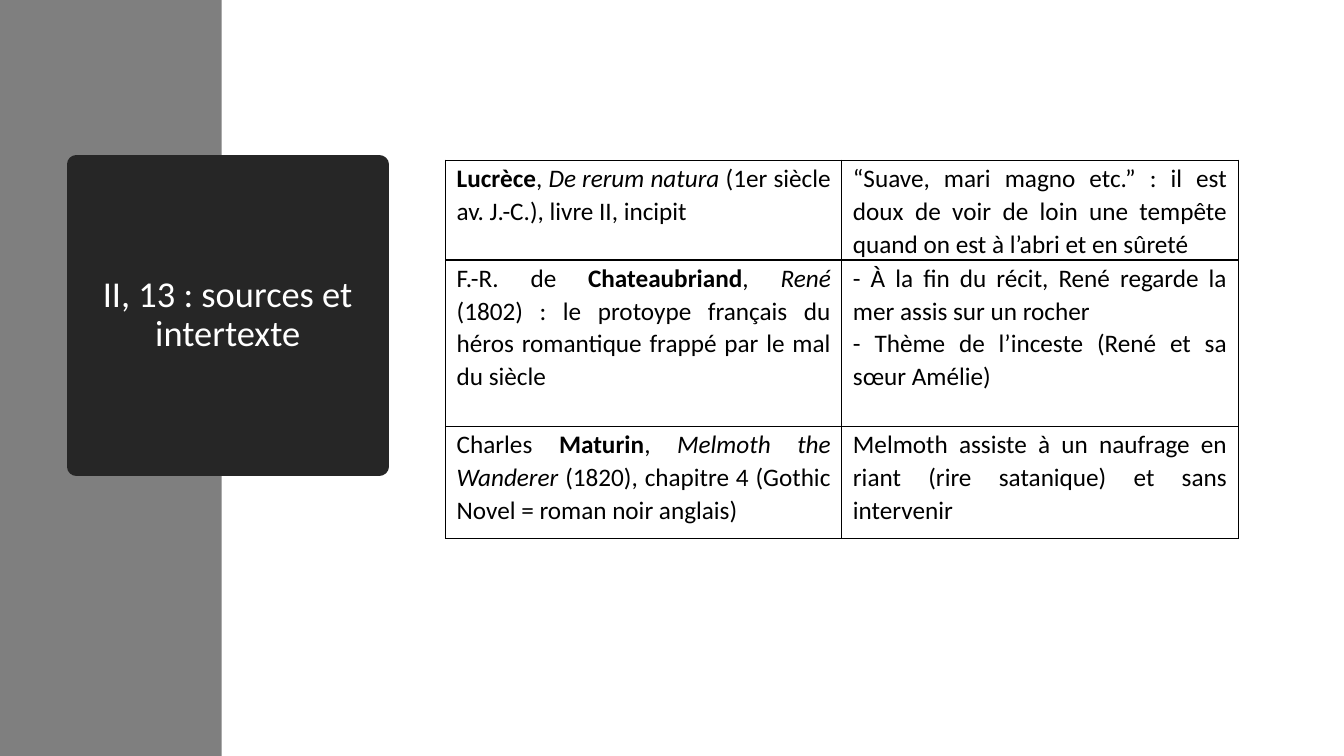
from typing import NamedTuple

from lxml import etree
from pptx import Presentation
from pptx.dml.color import RGBColor
from pptx.enum.shapes import MSO_SHAPE
from pptx.enum.text import MSO_ANCHOR, MSO_AUTO_SIZE, PP_ALIGN
from pptx.oxml import parse_xml
from pptx.oxml.ns import nsdecls
from pptx.util import Inches, Pt

RECTANGLE = MSO_SHAPE.RECTANGLE
MIDDLE, TOP = MSO_ANCHOR.MIDDLE, MSO_ANCHOR.TOP
CENTER, JUSTIFY = PP_ALIGN.CENTER, PP_ALIGN.JUSTIFY
NO_AUTOFIT = MSO_AUTO_SIZE.NONE

FONT = "Calibri"
GREY, DARK, BLACK, WHITE = "7F7F7F", "262626", "000000", "FFFFFF"
TITLE_LINE_WIDTH = 13.75
BORDER_WIDTH = 1
COLUMN_WIDTH = 3.93


class TextRun(NamedTuple):
    text: str
    bold: bool = False
    italic: bool = False


class SourceRow(NamedTuple):
    height: float
    work: list[TextRun]
    remarks: list[str]


SOURCES = [
    SourceRow(
        0.99,
        [
            TextRun("Lucrèce", bold=True),
            TextRun(", "),
            TextRun("De rerum natura", italic=True),
            TextRun(" (1er siècle av. J.-C.), livre II, incipit"),
        ],
        ["“Suave, mari magno etc.” : il est doux de voir de loin une tempête "
         "quand on est à l’abri et en sûreté"],
    ),
    SourceRow(
        1.65,
        [
            TextRun("F.-R. de "),
            TextRun("Chateaubriand", bold=True),
            TextRun(", "),
            TextRun("René", italic=True),
            TextRun(" (1802) : le protoype français du héros romantique "
                    "frappé par le mal du siècle"),
        ],
        ["- À la fin du récit, René regarde la mer assis sur un rocher",
         "- Thème de l’inceste (René et sa sœur Amélie)"],
    ),
    SourceRow(
        1.11,
        [
            TextRun("Charles "),
            TextRun("Maturin", bold=True),
            TextRun(", "),
            TextRun("Melmoth the Wanderer", italic=True),
            TextRun(" (1820), chapitre 4 (Gothic Novel = roman noir anglais)"),
        ],
        ["Melmoth assiste à un naufrage en riant (rire satanique) "
         "et sans intervenir"],
    ),
]


def color(value: str) -> RGBColor:
    return RGBColor.from_string(value)


def add_run(paragraph, content: TextRun, size: float, font_color: str) -> None:
    run = paragraph.add_run()
    run.text = content.text
    run.font.name = FONT
    run.font.size = Pt(size)
    run.font.bold = content.bold
    run.font.italic = content.italic
    run.font.color.rgb = color(font_color)


def set_borders(cell) -> None:
    properties = cell._tc.get_or_add_tcPr()
    for side in ("lnL", "lnR", "lnT", "lnB"):
        border = parse_xml(f'<a:{side} {nsdecls("a")} w="{Pt(BORDER_WIDTH)}"/>')
        fill = etree.SubElement(border, border.tag.replace(side, "solidFill"))
        etree.SubElement(fill, border.tag.replace(side, "srgbClr"), val=BLACK)
        properties.append(border)


def fill_cell(cell, paragraphs: list[list[TextRun]]) -> None:
    set_borders(cell)
    cell.fill.background()
    cell.vertical_anchor = TOP
    cell.margin_left = cell.margin_right = Inches(0.11)
    cell.margin_top, cell.margin_bottom = Inches(0.01), Inches(0)
    for index, runs in enumerate(paragraphs):
        frame = cell.text_frame
        paragraph = frame.add_paragraph() if index else frame.paragraphs[0]
        paragraph.alignment = JUSTIFY
        paragraph.line_spacing = 1.07
        for content in runs:
            add_run(paragraph, content, 18, BLACK)


def add_title(slide) -> None:
    title = slide.shapes.title
    title.left, title.top = Inches(0.76), Inches(1.63)
    title.width = title.height = Inches(3)
    title.fill.solid()
    title.fill.fore_color.rgb = color(DARK)
    title.line.color.rgb = color(DARK)
    title.line.width = Pt(TITLE_LINE_WIDTH)
    frame = title.text_frame
    frame.word_wrap = True
    frame.auto_size = NO_AUTOFIT
    frame.vertical_anchor = MIDDLE
    paragraph = frame.paragraphs[0]
    paragraph.alignment = CENTER
    paragraph.line_spacing = 0.9
    add_run(paragraph, TextRun("II, 13 : sources et intertexte"), 26, WHITE)


def add_side_band(slide) -> None:
    band = slide.shapes.add_shape(
        RECTANGLE, Inches(0), Inches(0), Inches(2.2), Inches(7.5))
    band.shadow.inherit = False
    band.fill.solid()
    band.fill.fore_color.rgb = color(GREY)
    band.line.fill.background()
    # The band lies behind the title
    slide.shapes.title.element.addprevious(band.element)


def add_sources_table(slide) -> None:
    height = sum(source.height for source in SOURCES)
    table = slide.shapes.add_table(
        len(SOURCES), 2, Inches(4.42), Inches(1.59),
        Inches(2 * COLUMN_WIDTH), Inches(height)).table
    table.first_row = False
    table.horz_banding = False
    for column in table.columns:
        column.width = Inches(COLUMN_WIDTH)
    for index, source in enumerate(SOURCES):
        table.rows[index].height = Inches(source.height)
        fill_cell(table.cell(index, 0), [source.work])
        fill_cell(table.cell(index, 1),
                  [[TextRun(remark)] for remark in source.remarks])


def main() -> None:
    presentation = Presentation()
    presentation.slide_width = Inches(13.33)
    presentation.slide_height = Inches(7.5)
    title_only = presentation.slide_layouts[5]
    slide = presentation.slides.add_slide(title_only)

    # Title square over the side band
    add_title(slide)
    add_side_band(slide)

    # Literary sources
    add_sources_table(slide)

    presentation.save("out.pptx")


if __name__ == "__main__":
    main()
